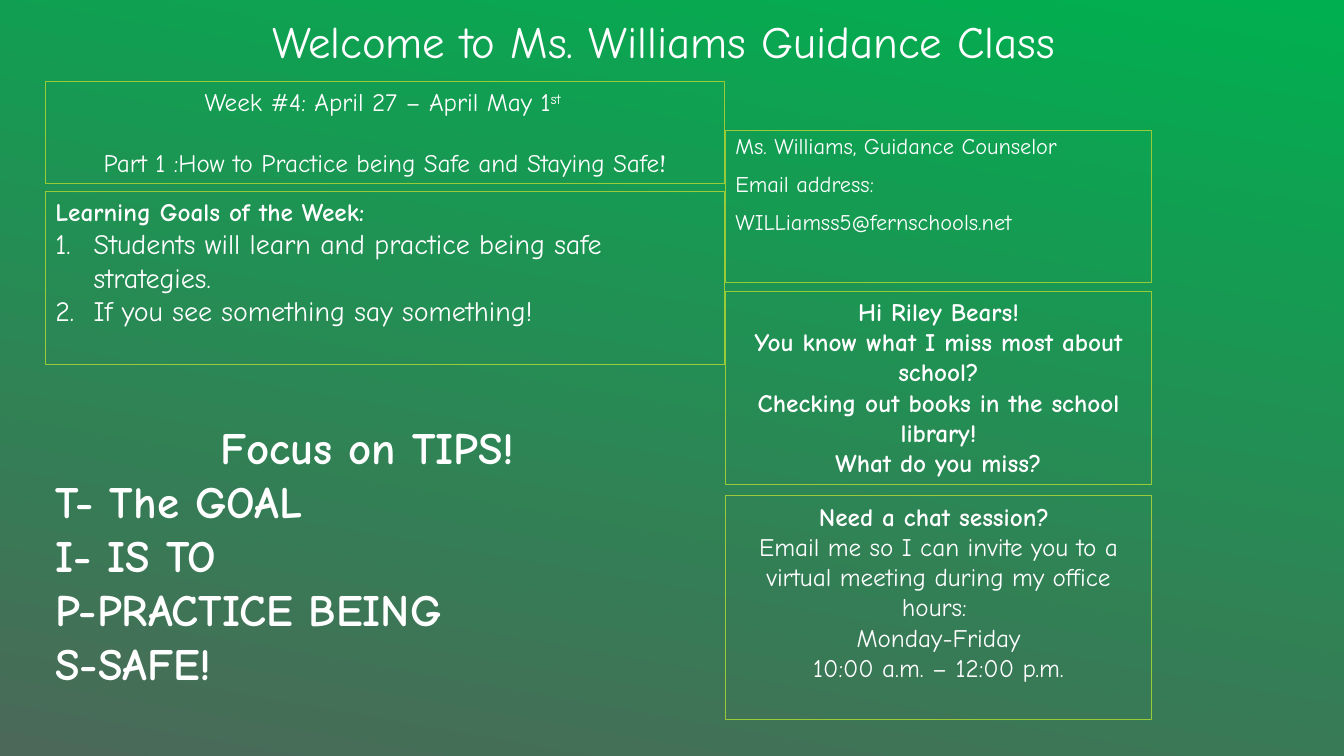
from dataclasses import dataclass
from typing import Optional

from lxml.etree import SubElement
from pptx import Presentation
from pptx.dml.color import RGBColor
from pptx.enum.text import MSO_ANCHOR as Anchor, MSO_AUTO_SIZE as AutoSize, PP_ALIGN as Align
from pptx.oxml.ns import qn
from pptx.util import Inches, Pt

WHITE = RGBColor(0xFF, 0xFF, 0xFF)
LIME = RGBColor(0x99, 0xCB, 0x38)
GREEN = RGBColor(0x00, 0xB0, 0x50)
SLATE = RGBColor(0x4B, 0x68, 0x58)
FONT = "Comic Neue"
SLIDE_W, SLIDE_H = Inches(13.33), Inches(7.5)
NUMBER_INDENT = Inches(0.38)


@dataclass(frozen=True)
class Column:
    """Left edge and width in percent of the slide width."""
    left: float
    width: float


@dataclass(frozen=True)
class Line:
    """One paragraph; the suffix is a further run, raised or in its own font."""
    text: str
    size: float = 18
    bold: bool = False
    centred: bool = True
    numbered: bool = False
    before: float = 0
    spacing: float = 1
    suffix: str = ""
    suffix_font: str = FONT
    raised: bool = False


@dataclass(frozen=True)
class Panel:
    """Top and height are in percent of the slide height."""
    column: Column
    top: float
    height: float
    lines: tuple[Line, ...]
    border: Optional[RGBColor] = LIME


TITLE_COLUMN = Column(13.73, 72.47)
LEFT = Column(3.38, 50.56)
TIPS_COLUMN = Column(3.38, 47.94)
RIGHT = Column(53.98, 31.7)

TITLE = Panel(TITLE_COLUMN, 0, 9.73, (
    Line("Welcome to Ms. Williams Guidance Class ", size=32, spacing=0.9),), None)

PANELS = (
    # Contact details
    Panel(RIGHT, 17.2, 20.13, tuple(
        Line(text, size=16, centred=False, before=10, spacing=0.9)
        for text in ("Ms. Williams, Guidance Counselor", "Email address:",
                     "WILLiamss5@fernschools.net"))),
    # Learning goals
    Panel(LEFT, 25.33, 22.93, (
        Line("Learning Goals of the Week:", bold=True, centred=False),
        Line("Students will learn and practice being safe strategies.",
             size=20, centred=False, numbered=True),
        Line("If you see something say something!",
             size=20, centred=False, numbered=True))),
    # Greeting
    Panel(RIGHT, 38.53, 25.6, tuple(
        Line(text, bold=True)
        for text in ("Hi Riley Bears!", "You know what I miss most about school?",
                     "Checking out books in the school library!",
                     "What do you miss?"))),
    # Week and topic
    Panel(LEFT, 10.8, 13.47, (
        Line("Week #4: April 27 – April May 1", suffix="st ", raised=True),
        Line("Part 1 :How to Practice being Safe and Staying Safe",
             before=21.5, suffix="!", suffix_font="Cambria"))),
    # Office hours
    Panel(RIGHT, 65.6, 29.6, (
        Line("Need a chat session? ", bold=True),
        Line("Email me so I can invite you to a virtual meeting during my office hours: "),
        Line("Monday-Friday"),
        Line("10:00 a.m. – 12:00 p.m."))),
    # Tips
    Panel(TIPS_COLUMN, 54.93, 44, (
        Line("Focus on TIPS!", size=32, bold=True),
        *(Line(text, size=32, bold=True, centred=False)
          for text in ("T- The GOAL", "I- IS TO", "P-PRACTICE BEING", "S-SAFE!"))),
        border=None),
)


def panel_box(panel: Panel) -> tuple[int, int, int, int]:
    column = panel.column
    return (int(SLIDE_W * column.left / 100), int(SLIDE_H * panel.top / 100),
            int(SLIDE_W * column.width / 100), int(SLIDE_H * panel.height / 100))


def write_line(paragraph, line: Line) -> None:
    paragraph.text = line.text
    paragraph.alignment = Align.CENTER if line.centred else Align.LEFT
    paragraph.line_spacing = line.spacing
    paragraph.space_before = Pt(line.before)
    if line.suffix:
        paragraph.add_run().text = line.suffix
    for run in paragraph.runs:
        run.font.name = FONT
        run.font.size = Pt(line.size)
        run.font.bold = line.bold
        run.font.color.rgb = WHITE
    if line.suffix:
        suffix = paragraph.runs[-1]
        suffix.font.name = line.suffix_font
        if line.raised:
            suffix._r.get_or_add_rPr().set("baseline", "30000")
    if line.numbered:
        properties = paragraph._p.get_or_add_pPr()
        properties.set("marL", str(NUMBER_INDENT))
        properties.set("indent", str(-NUMBER_INDENT))
        SubElement(properties, qn("a:buFont"), typeface="+mj-lt")
        SubElement(properties, qn("a:buAutoNum"), type="arabicPeriod")


def fill_panel(shape, panel: Panel, anchor: Anchor = Anchor.TOP) -> None:
    shape.left, shape.top, shape.width, shape.height = panel_box(panel)
    frame = shape.text_frame
    frame.word_wrap = True
    frame.auto_size = AutoSize.NONE
    frame.vertical_anchor = anchor
    frame.text = "\n".join(line.text for line in panel.lines)
    for paragraph, line in zip(frame.paragraphs, panel.lines):
        write_line(paragraph, line)
    if panel.border is not None:
        shape.line.color.rgb = panel.border
        shape.line.width = Pt(0.75)


def paint_background(slide) -> None:
    fill = slide.background.fill
    fill.gradient()
    fill.gradient_angle = 260
    for stop, colour in zip(fill.gradient_stops, (GREEN, SLATE)):
        stop.color.rgb = colour


def main() -> None:
    deck = Presentation()
    deck.slide_width, deck.slide_height = SLIDE_W, SLIDE_H
    slide = deck.slides.add_slide(deck.slide_layouts[5])
    paint_background(slide)
    fill_panel(slide.shapes.title, TITLE, Anchor.BOTTOM)
    for panel in PANELS:
        fill_panel(slide.shapes.add_textbox(*panel_box(panel)), panel)
    deck.save("out.pptx")


if __name__ == "__main__":
    main()
